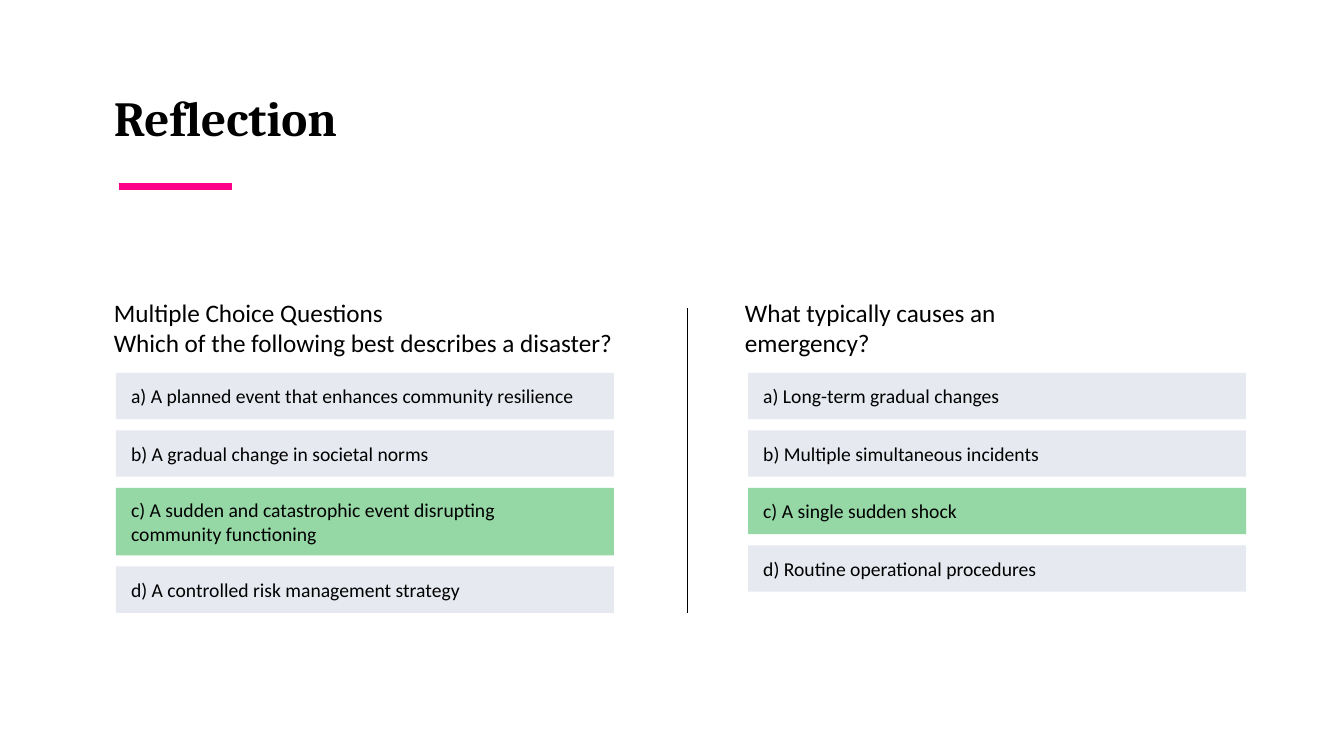
from dataclasses import dataclass

from lxml.etree import SubElement
from pptx import Presentation
from pptx.dml.color import RGBColor
from pptx.enum.shapes import MSO_CONNECTOR, MSO_SHAPE
from pptx.enum.text import MSO_ANCHOR as ANCHOR, MSO_AUTO_SIZE as AUTO, PP_ALIGN
from pptx.oxml.ns import qn
from pptx.util import Emu, Pt

EMU_PER_PX = 9144
COLORS = {
    "text": "000000",
    "accent": "FF008A",
    "option": "E6E9F0",
    "correct": "95D7A5",
}
OPTIONS_TOP, OPTION_W, OPTION_GAP = 370, 494, 11
LINE_H, OPTION_PAD = 21, 25


@dataclass(frozen=True)
class Option:
    text: str
    lines: int = 1
    correct: bool = False


@dataclass(frozen=True)
class Question:
    left: int
    width: int
    options_left: int
    heading: tuple[str, ...]
    options: tuple[Option, ...]


@dataclass(frozen=True)
class Rule:
    start: tuple[int, int]
    end: tuple[int, int]
    color: str
    weight: float


QUESTIONS = (
    Question(
        103, 549, 115,
        ("Multiple Choice Questions", "Which of the following best describes a disaster?"),
        (
            Option("a) A planned event that enhances community resilience"),
            Option("b) A gradual change in societal norms"),
            Option("c) A sudden and catastrophic event disrupting community functioning", 2, True),
            Option("d) A controlled risk management strategy"),
        ),
    ),
    Question(
        729, 360, 742,
        ("What typically causes an emergency?",),
        (
            Option("a) Long-term gradual changes"),
            Option("b) Multiple simultaneous incidents"),
            Option("c) A single sudden shock", correct=True),
            Option("d) Routine operational procedures"),
        ),
    ),
)
RULES = (
    Rule((118, 185), (230, 185), "accent", 4.5),
    Rule((682, 306), (682, 608), "text", 0.75),
)


def px(n: int) -> Emu:
    return Emu(n * EMU_PER_PX)


def rgb(name: str) -> RGBColor:
    return RGBColor.from_string(COLORS[name])


def write(tf, lines: tuple[str, ...], size: int, font: str = "Calibri",
          bold: bool = False, anchor=ANCHOR.TOP, left: int = 10, right: int = 10) -> None:
    tf.word_wrap = True
    tf.auto_size = AUTO.NONE
    tf.vertical_anchor = anchor
    tf.margin_left, tf.margin_right = px(left), px(right)
    tf.margin_top = tf.margin_bottom = px(5)
    for i, line in enumerate(lines):
        p = tf.paragraphs[0] if i == 0 else tf.add_paragraph()
        p.alignment = PP_ALIGN.LEFT
        r = p.add_run()
        r.text = line
        r.font.name, r.font.size, r.font.bold = font, Pt(size), bold
        r.font.color.rgb = rgb("text")


def draw_title(s, text: str) -> None:
    sp = s.shapes.title
    sp.left, sp.top, sp.width, sp.height = px(103), px(82), px(667), px(69)
    write(sp.text_frame, (text,), 35, "Cambria", True)


def draw_rule(s, rule: Rule) -> None:
    line = s.shapes.add_connector(
        MSO_CONNECTOR.STRAIGHT, *map(px, rule.start), *map(px, rule.end))
    line.line.color.rgb = rgb(rule.color)
    line.line.width = Pt(rule.weight)
    SubElement(line._element.spPr, qn("a:effectLst"))


def draw_option(s, option: Option, left: int, top: int) -> int:
    height = OPTION_PAD + LINE_H * option.lines
    sp = s.shapes.add_shape(
        MSO_SHAPE.RECTANGLE, px(left), px(top), px(OPTION_W), px(height))
    sp.shadow.inherit = False
    sp.fill.solid()
    sp.fill.fore_color.rgb = rgb("correct" if option.correct else "option")
    sp.line.fill.background()
    write(sp.text_frame, (option.text,), 14, anchor=ANCHOR.MIDDLE, left=15, right=26)
    return top + height + OPTION_GAP


def draw_question(s, question: Question) -> None:
    heading = s.shapes.add_textbox(px(question.left), px(290), px(question.width), px(71))
    write(heading.text_frame, question.heading, 18)
    top = OPTIONS_TOP
    for option in question.options:
        top = draw_option(s, option, question.options_left, top)


def main() -> None:
    prs = Presentation()
    prs.slide_width, prs.slide_height = px(1333), px(750)
    s = prs.slides.add_slide(prs.slide_layouts[5])
    draw_title(s, "Reflection")
    for rule in RULES:
        draw_rule(s, rule)
    for question in QUESTIONS:
        draw_question(s, question)
    prs.save("out.pptx")


if __name__ == "__main__":
    main()
